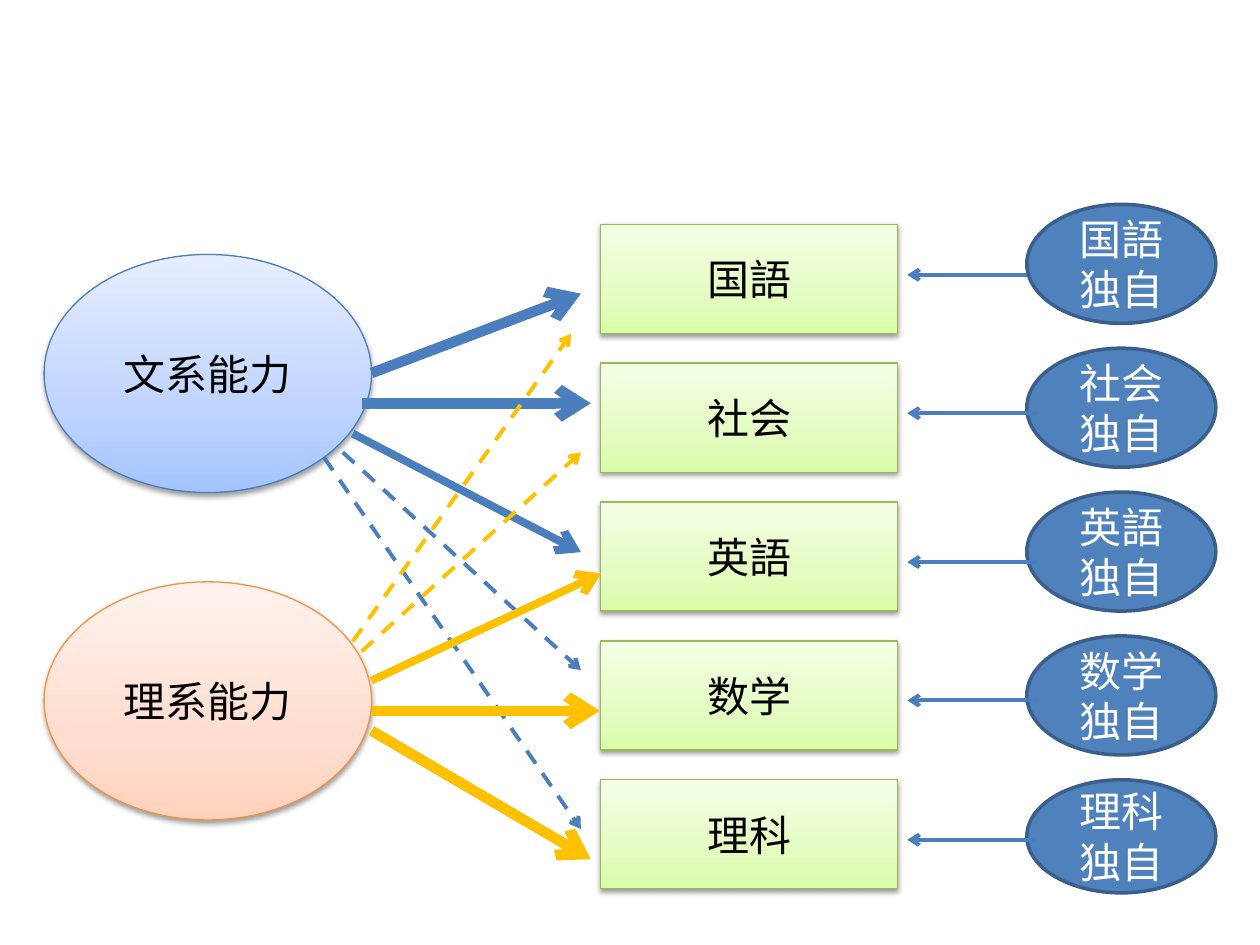
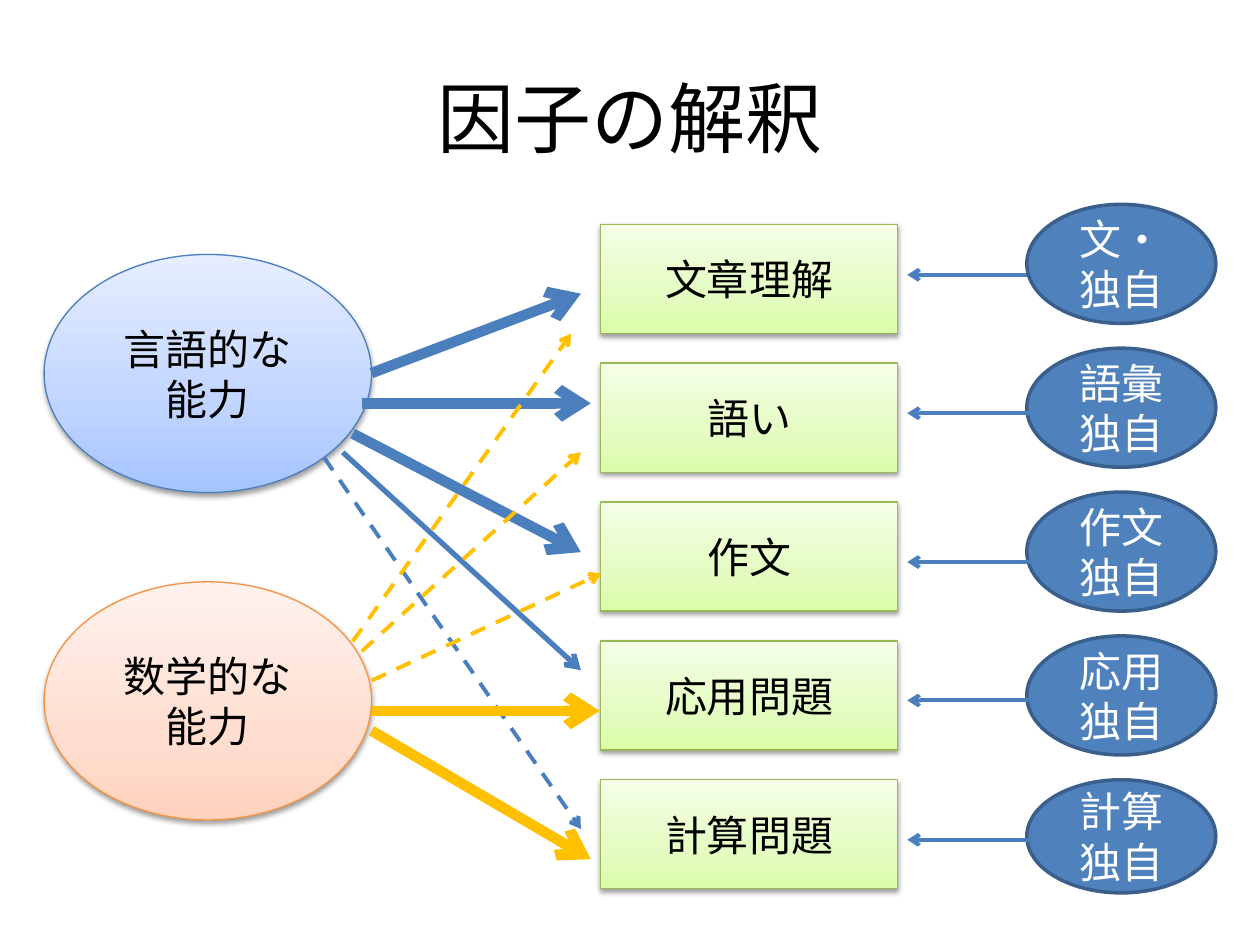
"""Build two factor-analysis path diagrams that share one layout."""
from copy import deepcopy
from dataclasses import dataclass

from lxml import etree
from pptx import Presentation
from pptx.dml.color import RGBColor
from pptx.enum.dml import MSO_LINE
from pptx.enum.shapes import MSO_CONNECTOR, MSO_SHAPE
from pptx.enum.text import MSO_ANCHOR, PP_ALIGN
from pptx.oxml.ns import qn
from pptx.util import Cm, Pt

OVAL, RECTANGLE = MSO_SHAPE.OVAL, MSO_SHAPE.RECTANGLE
STRAIGHT, DASH = MSO_CONNECTOR.STRAIGHT, MSO_LINE.DASH
CENTER, MIDDLE = PP_ALIGN.CENTER, MSO_ANCHOR.MIDDLE


@dataclass(frozen=True)
class Theme:
    font: str = "Calibri"
    title_size: int = 44
    label_size: int = 24
    dark: str = "000000"
    light: str = "FFFFFF"
    blue: str = "4B7EBC"
    yellow: str = "FFC000"
    unique_fill: str = "4F81BD"
    unique_line: str = "3A5F8C"
    blue_fade: tuple = ("A4C4FF", "BFD4FF", "E6EEFF")
    orange_fade: tuple = ("FFD2BD", "FFDED0", "FFF2ED")
    green_fade: tuple = ("DAFDA7", "E4FCC2", "F5FFE7")
    orange_line: str = "F69240"
    green_line: str = "98B955"


THEME = Theme()
FADE_POSITIONS = (0, 0.35, 1)
STRONG, MEDIUM, MILD, WEAK = (6, None), (4.5, None), (3, None), (2.25, DASH)
PLAIN = (2.25, None)

DIAGRAMS = [
    {
        "title": None,
        "factors": ["文系能力", "理系能力"],
        "subjects": ["国語", "社会", "英語", "数学", "理科"],
        "uniques": ["国語独自", "社会独自", "英語独自", "数学独自", "理科独自"],
        "loadings": [[STRONG, STRONG, MEDIUM, WEAK, WEAK],
                     [MEDIUM, STRONG, STRONG, WEAK, WEAK]],
    },
    {
        "title": "因子の解釈",
        "factors": ["言語的な\n能力", "数学的な\n能力"],
        "subjects": ["文章理解", "語い", "作文", "応用問題", "計算問題"],
        "uniques": ["文・\n独自", "語彙独自", "作文独自", "応用独自", "計算独自"],
        "loadings": [[STRONG, STRONG, STRONG, MILD, WEAK],
                     [WEAK, STRONG, STRONG, WEAK, WEAK]],
    },
]

FACTOR_STYLES = [(THEME.blue_fade, THEME.blue), (THEME.orange_fade, THEME.orange_line)]
LOADING_COLORS = [THEME.blue, THEME.yellow]
LOADING_ENDS = [
    [((7.49, 7.52), (11.71, 5.92)), ((7.29, 8.13), (11.91, 8.13)),
     ((7.11, 8.74), (11.71, 11.13)), ((6.91, 9.12), (11.71, 13.51)),
     ((6.53, 9.22), (11.71, 16.71))],
    [((7.49, 13.72), (12.12, 11.56)), ((7.49, 14.33), (12.09, 14.33)),
     ((7.49, 14.73), (11.91, 17.32)), ((7.29, 13.13), (11.71, 9.12)),
     ((7.11, 12.93), (11.51, 6.73))],
]
UNIQUE_ARROW_LEVELS = [5.54, 8.33, 11.33, 14.12, 16.93]
UNIQUE_HEIGHTS = [2.4, 2.4, 2.4, 2.4, 2.28]


def rgb(value):
    return RGBColor.from_string(value)


def write_text(shape, text, size=THEME.label_size, color=THEME.dark):
    frame = shape.text_frame
    frame.word_wrap = True
    frame.vertical_anchor = MIDDLE
    frame.text = text
    for para in frame.paragraphs:
        para.alignment = CENTER
        for span in para.runs:
            span.font.name = THEME.font
            span.font.size = Pt(size)
            span.font.color.rgb = rgb(color)


def add_node(page, kind, area, text, line, line_width, color):
    node = page.shapes.add_shape(kind, *(Cm(length) for length in area))
    node.shadow.inherit = False
    node.line.color.rgb = rgb(line)
    node.line.width = Pt(line_width)
    write_text(node, text, color=color)
    return node


def add_faded_node(page, kind, area, text, fade, line):
    node = add_node(page, kind, area, text, line, 0.75, THEME.dark)
    node.fill.gradient()
    node.fill.gradient_angle = 90
    properties = node._element.spPr
    stop_list = properties.find(".//" + qn("a:gsLst"))
    stop_list.append(deepcopy(stop_list[0]))
    for stop, position, color in zip(node.fill.gradient_stops, FADE_POSITIONS, fade):
        stop.position = position
        stop.color.rgb = rgb(color)
    shadow = etree.SubElement(properties.find(qn("a:effectLst")), qn("a:outerShdw"),
                              blurRad=str(Pt(3.1)), dist=str(Pt(1.6)),
                              dir="5400000", rotWithShape="0")
    tone = etree.SubElement(shadow, qn("a:srgbClr"), val=THEME.dark)
    etree.SubElement(tone, qn("a:alpha"), val="38000")


def add_arrow(page, start, end, color, style):
    width, dash = style
    arrow = page.shapes.add_connector(STRAIGHT, *(Cm(length) for length in start + end))
    arrow.line.color.rgb = rgb(color)
    arrow.line.width = Pt(width)
    if dash:
        arrow.line.dash_style = dash
    etree.SubElement(arrow.line._get_or_add_ln(), qn("a:tailEnd"), type="arrow")
    etree.SubElement(arrow._element.spPr, qn("a:effectLst"))


def add_unique_arrow(page, level):
    add_arrow(page, (20.9, level), (18.29, level), THEME.blue, PLAIN)


def add_title(page, text):
    title = page.shapes.title
    title.left, title.top, title.width, title.height = Cm(1.27), Cm(0.76), Cm(22.86), Cm(3.18)
    write_text(title, text, size=THEME.title_size)


def add_diagram(deck, diagram):
    page = deck.slides.add_slide(deck.slide_layouts[5 if diagram["title"] else 6])
    if diagram["title"]:
        add_title(page, diagram["title"])
    for row, (text, style) in enumerate(zip(diagram["factors"], FACTOR_STYLES)):
        add_faded_node(page, OVAL, (0.89, 5.13 + 6.6 * row, 6.6, 4.8), text, *style)
    for row, text in enumerate(diagram["subjects"]):
        add_faded_node(page, RECTANGLE, (12.1, 4.52 + 2.8 * row, 6, 2.2), text,
                       THEME.green_fade, THEME.green_line)
    for color, ends, styles in zip(LOADING_COLORS, LOADING_ENDS, diagram["loadings"]):
        for (start, end), style in zip(ends, styles):
            add_arrow(page, start, end, color, style)
    first_level, *other_levels = UNIQUE_ARROW_LEVELS
    add_unique_arrow(page, first_level)
    for row, (text, height) in enumerate(zip(diagram["uniques"], UNIQUE_HEIGHTS)):
        node = add_node(page, OVAL, (20.7, 4.12 + 2.9 * row, 3.81, height), text,
                        THEME.unique_line, 2, THEME.light)
        node.fill.solid()
        node.fill.fore_color.rgb = rgb(THEME.unique_fill)
    for level in other_levels:
        add_unique_arrow(page, level)


def main():
    deck = Presentation()
    deck.slide_width, deck.slide_height = Cm(25.4), Cm(19.05)
    for diagram in DIAGRAMS:
        add_diagram(deck, diagram)
    deck.save("out.pptx")


if __name__ == "__main__":
    main()
